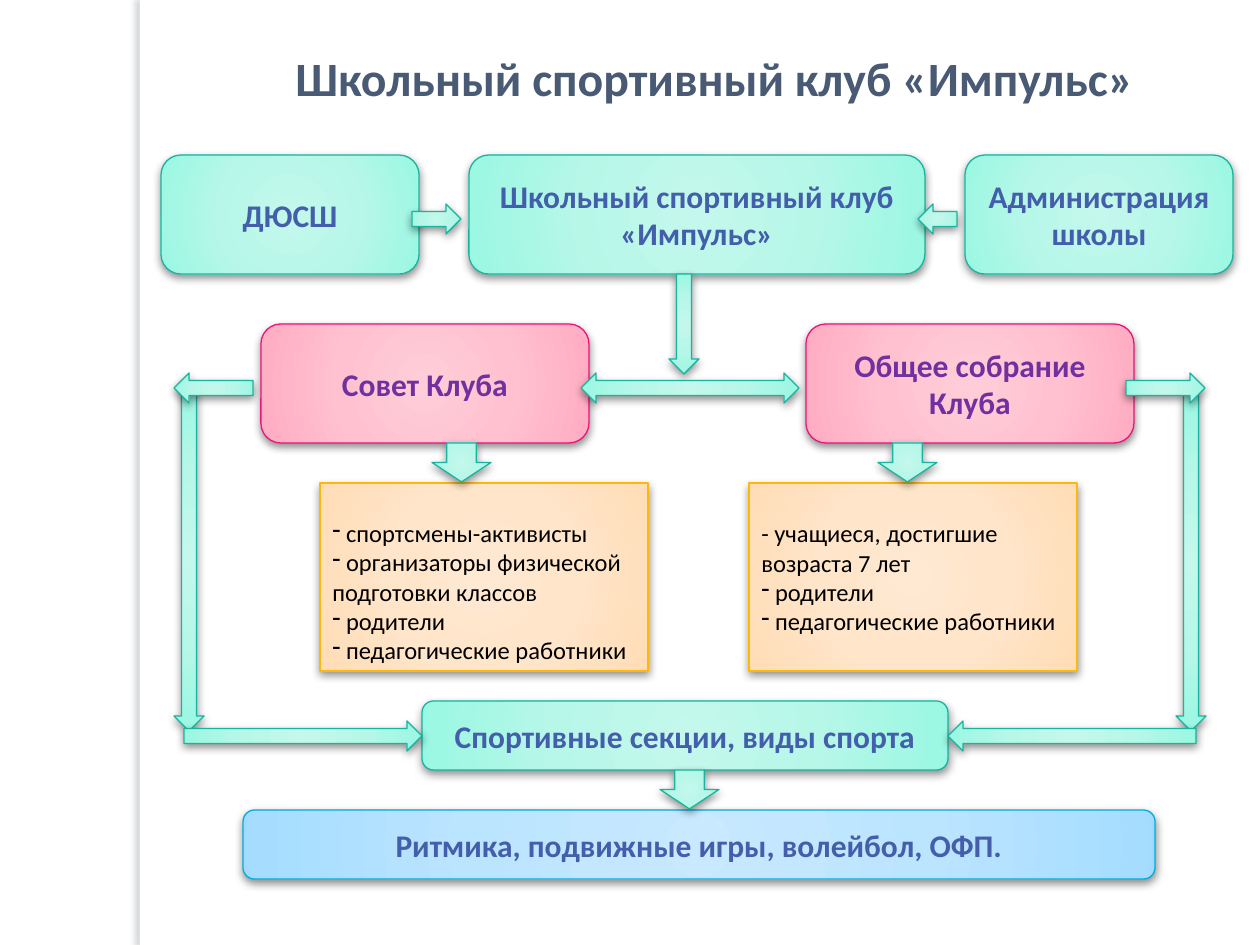
import dataclasses

import pptx
import pptx.dml.color
import pptx.enum.shapes
import pptx.enum.text
import pptx.oxml
import pptx.oxml.ns
import pptx.util

PX = 914400 / 126
SHAPE = pptx.enum.shapes.MSO_SHAPE
ALIGN = pptx.enum.text.PP_ALIGN
ANCHOR = pptx.enum.text.MSO_ANCHOR
RGB = pptx.dml.color.RGBColor.from_string


@dataclasses.dataclass(frozen=True)
class Theme:
    font: str = "Calibri"
    title_size: float = 27.3
    box_size: int = 18
    list_size: int = 14
    title: str = "495A74"
    blue: str = "435EAA"
    purple: str = "7030A0"
    black: str = "000000"
    white: str = "FFFFFF"
    band_shadow: tuple = ("697580", 25, 3, 3, 180)
    box_shadow: tuple = ("000000", 43, 5, 2, 90)
    mint: tuple = ("1AB39F", "C4F8EC", "B6F7E8", "9CF7E3", "92FAE3")
    pink: tuple = ("EA157A", "FFCDD9", "FFC1D0", "FFADC2", "FFA7BE")
    peach: tuple = ("FEB80A", "FFE9D3", "FFE5C9", "FFDDB7", "FFDBB2")
    sky: tuple = ("00ADDC", "C8E9FF", "BBE4FF", "A6DDFF", "A0DBFF")


theme = Theme()


def write_text(shape, lines, *, size, color, bold=False, align=ALIGN.LEFT, anchor=ANCHOR.MIDDLE):
    frame = shape.text_frame
    frame.word_wrap = True
    frame.vertical_anchor = anchor
    for index, line in enumerate(lines):
        paragraph = frame.paragraphs[0] if index == 0 else frame.add_paragraph()
        paragraph.alignment = align
        if line.startswith(" "):
            bullet = pptx.oxml.parse_xml(f'<a:buChar {pptx.oxml.ns.nsdecls("a")} char="-"/>')
            paragraph._p.get_or_add_pPr().append(bullet)
        run = paragraph.add_run()
        run.text = line
        run.font.name = theme.font
        run.font.size = pptx.util.Pt(size)
        run.font.bold = bold
        run.font.color.rgb = RGB(color)


def add_panel(kind, bounds, palette, shadow):
    shape = slide.shapes.add_shape(kind, *(round(value * PX) for value in bounds))
    namespace = pptx.oxml.ns.nsdecls("a")
    properties = shape._element.spPr
    if palette:
        line_color, *stop_colors = palette
        shape.line.color.rgb = RGB(line_color)
        shape.line.width = pptx.util.Pt(0.75)
        stops = "".join(
            f'<a:gs pos="{position}000"><a:srgbClr val="{color}"/></a:gs>'
            for position, color in zip((0, 50, 97, 100), stop_colors)
        )
        gradient = pptx.oxml.parse_xml(
            f'<a:gradFill {namespace} rotWithShape="1"><a:gsLst>{stops}</a:gsLst><a:path path="circle">'
            '<a:fillToRect l="50000" t="50000" r="50000" b="50000"/></a:path></a:gradFill>'
        )
        properties.insert(2, gradient)
    else:
        shape.fill.solid()
        shape.fill.fore_color.rgb = RGB(theme.white)
        shape.line.fill.background()
    color, opacity, blur, distance, angle = shadow
    properties.append(pptx.oxml.parse_xml(
        f'<a:effectLst {namespace}><a:outerShdw blurRad="{blur * 12700}" dist="{distance * 12700}" '
        f'dir="{angle * 60000}" algn="ctr" rotWithShape="0"><a:srgbClr val="{color}">'
        f'<a:alpha val="{opacity * 1000}"/></a:srgbClr></a:outerShdw></a:effectLst>'
    ))
    return shape


presentation = pptx.Presentation()
presentation.slide_width = round(1260 * PX)
presentation.slide_height = round(945 * PX)
slide = presentation.slides.add_slide(presentation.slide_layouts[5])

title = slide.shapes.title
title.left, title.top, title.width, title.height = (round(value * PX) for value in (198, 38, 1033, 78))
write_text(title, ["Школьный спортивный клуб «Импульс»"], size=theme.title_size,
           color=theme.title, bold=True, align=ALIGN.CENTER)

add_panel(SHAPE.RECTANGLE, (140, 0, 10, 945), None, theme.band_shadow)

boxes = [
    ("Школьный спортивный клуб «Импульс»", (469, 155, 456, 119), theme.mint, theme.blue),
    ("Совет Клуба", (261, 324, 328, 119), theme.pink, theme.purple),
    ("Общее собрание Клуба", (806, 324, 328, 119), theme.pink, theme.purple),
    ("ДЮСШ", (161, 155, 258, 119), theme.mint, theme.blue),
    ("Администрация школы", (965, 155, 268, 119), theme.mint, theme.blue),
    ("Спортивные секции, виды спорта", (422, 701, 526, 69), theme.mint, theme.blue),
    ("Ритмика, подвижные игры, волейбол, ОФП.", (243, 810, 912, 69), theme.sky, theme.blue),
]
for text, bounds, palette, color in boxes:
    box = add_panel(SHAPE.ROUNDED_RECTANGLE, bounds, palette, theme.box_shadow)
    write_text(box, [text], size=theme.box_size, color=color, bold=True, align=ALIGN.CENTER)

member_lists = [
    (320, ANCHOR.BOTTOM, [" спортсмены-активисты", " организаторы физической подготовки классов",
                          " родители", " педагогические работники"]),
    (749, ANCHOR.MIDDLE, ["- учащиеся, достигшие возраста 7 лет", " родители",
                          " педагогические работники"]),
]
for left, anchor, members in member_lists:
    box = add_panel(SHAPE.RECTANGLE, (left, 483, 328, 188), theme.peach, theme.box_shadow)
    write_text(box, members, size=theme.list_size, color=theme.black, anchor=anchor)

arrows = [
    (SHAPE.RIGHT_ARROW, (412, 204, 49, 30)),
    (SHAPE.LEFT_ARROW, (918, 204, 39, 30)),
    (SHAPE.DOWN_ARROW, (669, 274, 30, 100)),
    (SHAPE.LEFT_RIGHT_ARROW, (581, 373, 218, 30)),
    (SHAPE.DOWN_ARROW, (432, 443, 59, 39)),
    (SHAPE.DOWN_ARROW, (878, 443, 59, 39)),
    (SHAPE.DOWN_ARROW, (1176, 393, 30, 338)),
    (SHAPE.DOWN_ARROW, (660, 770, 59, 39)),
    (SHAPE.RIGHT_ARROW, (1126, 373, 79, 30)),
    (SHAPE.LEFT_ARROW, (948, 721, 248, 30)),
    (SHAPE.DOWN_ARROW, (174, 383, 30, 348)),
    (SHAPE.LEFT_ARROW, (174, 373, 79, 30)),
    (SHAPE.RIGHT_ARROW, (184, 721, 238, 30)),
]
for kind, bounds in arrows:
    add_panel(kind, bounds, theme.mint, theme.box_shadow)

presentation.save("out.pptx")
